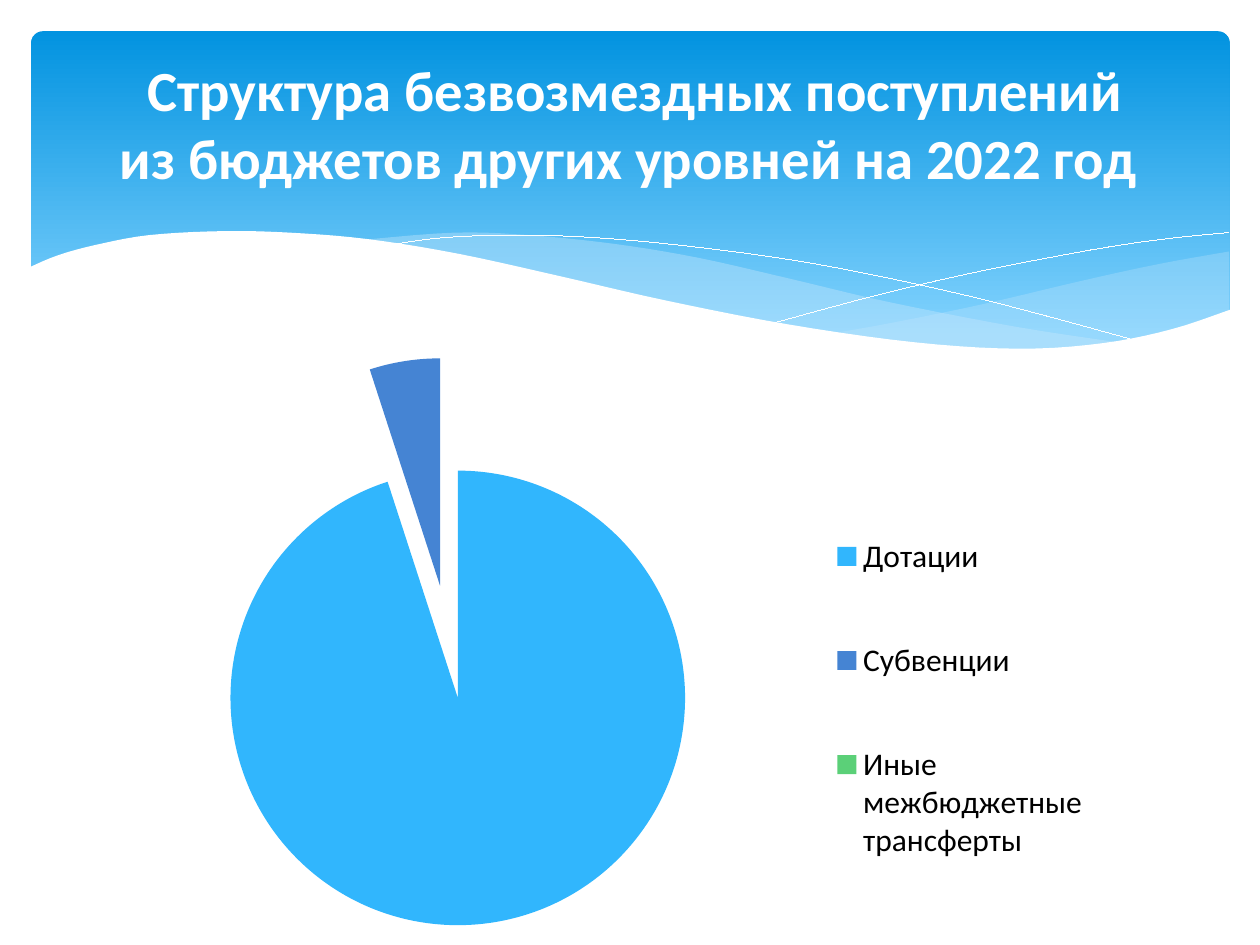
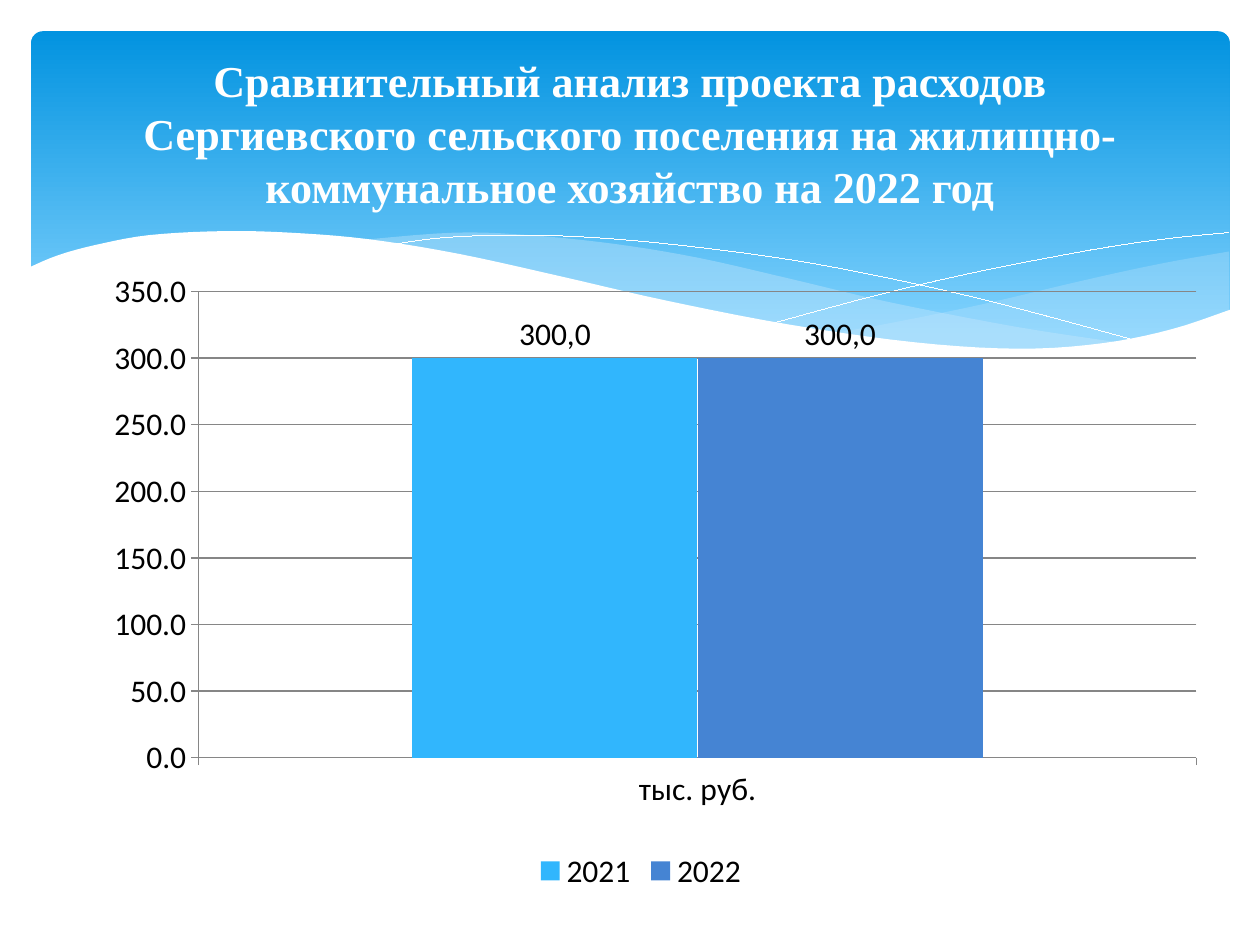
from lxml.etree import SubElement as Sub
from pptx import Presentation
from pptx.chart.data import CategoryChartData as Data
from pptx.dml.color import RGBColor
from pptx.enum.chart import XL_CHART_TYPE as Kind
from pptx.enum.chart import XL_LABEL_POSITION as Spot
from pptx.enum.chart import XL_LEGEND_POSITION as Side
from pptx.enum.chart import XL_TICK_MARK as Tick
from pptx.enum.shapes import MSO_SHAPE as Form
from pptx.enum.text import MSO_ANCHOR as Anchor
from pptx.enum.text import MSO_AUTO_SIZE as Fit
from pptx.enum.text import PP_ALIGN as Align
from pptx.oxml.ns import qn
from pptx.util import Cm, Pt

WHITE, BLACK, GREY = "FFFFFF", "000000", "868686"
DEEP, LIGHT, MIST = "0293E0", "83D3FE", "C6E7FC"
HUES = "31B6FD", "4584D3", "5BD078"
FONT = "Calibri"
BAND = 0.63, 0.63, 24.16, 6.86

RIGHT = [
    [(24.15, 4.44), (22.75, 4.69), (21.23, 5.02), (19.15, 5.51),
     (17.29, 5.89), (16.15, 6.09)],
    [(16.15, 6.09), (17.62, 6.27), (19.48, 6.4), (20.8, 6.4),
     (21.94, 6.27), (23.11, 6.01), (24.15, 5.63)],
]
LEFT = [
    [(22.04, 6.29), (19.86, 5.96), (17.29, 5.46), (15.34, 5), (13.46, 4.57),
     (11.78, 4.29), (10.03, 4.11), (8.53, 4.06), (6.62, 4.21)],
    [(6.62, 4.21), (8.55, 4.52), (10.76, 5), (12.82, 5.46), (15.06, 5.91),
     (17.01, 6.22), (18.69, 6.4), (20.14, 6.42), (22.04, 6.29)],
]
FALL = [[(7.21, 4.31), (8.33, 4.16), (9.93, 4.11), (11.78, 4.19),
         (14.14, 4.44), (16.25, 4.77), (18.66, 5.28), (20.47, 5.74),
         (22.4, 6.27)]]
RISE = [[(14.93, 5.89), (17.01, 5.33), (19.07, 4.85), (21.36, 4.41),
         (22.83, 4.19), (24.13, 4.06)]]
EDGE = [
    [(24.18, 5.61), (22.98, 6.01), (21.59, 6.29), (19.91, 6.4), (17.8, 6.27),
     (15.26, 5.91), (12.8, 5.43), (10.71, 4.95), (8.63, 4.49), (6.78, 4.19),
     (5.2, 4.06), (3.86, 4.03), (2.38, 4.11), (1.29, 4.31), (0.53, 4.52),
     (-0.06, 4.77)],
    [(-0.06, 7.72), (24.18, 7.72)],
]


def tint(code):
    """Turn a hex string into a colour."""
    return RGBColor.from_string(code)


def paint(fill, code):
    """Give a fill one solid colour."""
    fill.solid()
    fill.fore_color.rgb = tint(code)


def style(font, size, code, name=FONT, bold=False):
    """Set the look of a font."""
    font.size, font.name, font.bold = Pt(size), name, bold
    font.color.rgb = tint(code)


def smooth(knots, steps=5):
    """Return points on a Catmull-Rom curve through the knots."""
    if len(knots) < 3:
        return knots
    ends = [knots[0], *knots, knots[-1]]
    dots = [knots[0]]
    for quad in zip(ends, ends[1:], ends[2:], ends[3:]):
        for step in range(1, steps + 1):
            t = step / steps
            dots.append(tuple(
                b + t * (c - a) / 2
                + t * t * (2 * a - 5 * b + 4 * c - d) / 2
                + t ** 3 * (3 * b - a - 3 * c + d) / 2
                for a, b, c, d in zip(*quad)))
    return dots


def add_wave(slide, box, curves, code=None, alpha=100):
    """Draw curves as a filled outline, or as a thin white line."""
    left, top = box[:2]
    dots = [(Cm(left + x), Cm(top + y))
            for knots in curves for x, y in smooth(knots)]
    pen = slide.shapes.build_freeform(*dots[0], scale=1.0)
    pen.add_line_segments(dots[1:], close=code is not None)
    wave = pen.convert_to_shape()
    wave.shadow.inherit = False
    if code is None:
        wave.fill.background()
        paint(wave.line.fill, WHITE)
        wave.element.spPr.find(qn("a:ln")).set("w", "0")
        return
    paint(wave.fill, code)
    wave.line.fill.background()
    if alpha < 100:
        mark = wave.element.spPr.find(".//" + qn("a:srgbClr"))
        Sub(mark, qn("a:alpha"), val=str(alpha * 1000))


def add_band(slide, box):
    """Draw the blue header band with its waves."""
    band = slide.shapes.add_shape(Form.ROUNDED_RECTANGLE, *map(Cm, box))
    band.adjustments[0] = 0.034
    band.shadow.inherit = False
    band.line.fill.background()
    band.fill.gradient()
    band.fill.gradient_angle = 270
    for stop, code, place in zip(band.fill.gradient_stops,
                                 (DEEP, LIGHT), (0, 0.9)):
        stop.color.rgb, stop.position = tint(code), place
    add_wave(slide, box, RIGHT, MIST, 29)
    add_wave(slide, box, LEFT, MIST, 40)
    add_wave(slide, box, FALL)
    add_wave(slide, box, RISE)
    add_wave(slide, box, EDGE, WHITE)


def set_title(slide, box, text, size, name):
    """Place the title over the band and format it."""
    title = slide.shapes.title
    slide.shapes.element.append(title.element)
    title.left, title.top, title.width, title.height = map(Cm, box)
    frame = title.text_frame
    frame.text = text
    frame.auto_size, frame.word_wrap = Fit.NONE, True
    frame.vertical_anchor = Anchor.MIDDLE
    for para in frame.paragraphs:
        para.alignment = Align.CENTER
        for run in para.runs:
            style(run.font, size, WHITE, name, True)


def new_slide(deck, box, text, size, name):
    """Add a slide with the shared band and a title."""
    slide = deck.slides.add_slide(deck.slide_layouts[5])
    add_band(slide, BAND)
    set_title(slide, box, text, size, name)
    return slide


def lay_out(part, index, place, inner=False):
    """Fix a chart part at fractions of the chart's size."""
    for old in part.findall(qn("c:layout")):
        part.remove(old)
    node = part.makeelement(qn("c:layout"))
    part.insert(index, node)
    manual = Sub(node, qn("c:manualLayout"))
    if inner:
        Sub(manual, qn("c:layoutTarget"), val="inner")
    for axis in "xy":
        Sub(manual, qn(f"c:{axis}Mode"), val="edge")
    for key, share in zip("xywh", place):
        Sub(manual, qn(f"c:{key}"), val=str(share))


def add_graph(slide, box, kind, data, plot, side):
    """Add a chart with the shared font, plot place and legend."""
    chart = slide.shapes.add_chart(kind, *map(Cm, box), data).chart
    chart.has_title = False
    style(chart.font, 18, BLACK)
    chart.has_legend = True
    chart.legend.position = side
    chart.legend.include_in_layout = False
    area = chart.element.find(".//" + qn("c:plotArea"))
    lay_out(area, 0, plot, True)
    return chart


def add_pie(slide, box):
    """Add the pie of transfers with its slices pulled apart."""
    data = Data()
    data.categories = ["Дотации", "Субвенции",
                       "Иные \nмежбюджетные трансферты"]
    data.add_series("Series 1", (95, 5, None))
    chart = add_graph(slide, box, Kind.PIE, data,
                      (0.02, 0.07, 0.61, 0.9), Side.RIGHT)
    lay_out(chart.legend._element, 1, (0.69, 0.25, 0.29, 0.72))
    chart.plots[0].vary_by_categories = True
    pie = chart.plots[0].series[0]
    burst = pie._element.makeelement(qn("c:explosion"), val="25")
    pie._element.find(qn("c:cat")).addprevious(burst)
    for spot, code in enumerate(HUES):
        paint(pie.points[spot].format.fill, code)


def add_bars(slide, box):
    """Add the columns that compare two years."""
    data = Data(number_format="#,##0.0")
    data.categories = ["тыс. руб."]
    for year in ("2021", "2022"):
        data.add_series(year, [300])
    chart = add_graph(slide, box, Kind.COLUMN_CLUSTERED, data,
                      (0.11, 0.04, 0.88, 0.74), Side.BOTTOM)
    plot = chart.plots[0]
    plot.gap_width, plot.overlap = 150, 0
    plot.vary_by_categories = False
    for bar, code in zip(plot.series, HUES):
        paint(bar.format.fill, code)
        label = bar.points[0].data_label
        label.text_frame.text = "300,0"
        style(label.text_frame.paragraphs[0].runs[0].font, 18, BLACK)
        label.position = Spot.OUTSIDE_END
    scale = chart.value_axis
    scale.minimum_scale, scale.maximum_scale, scale.major_unit = 0, 350, 50
    scale.tick_labels.number_format = "#,##0.0"
    scale.tick_labels.number_format_is_linked = False
    scale.has_major_gridlines = True
    paint(scale.major_gridlines.format.line.fill, GREY)
    for axis in (scale, chart.category_axis):
        axis.major_tick_mark = Tick.OUTSIDE
        axis.minor_tick_mark = Tick.NONE
        paint(axis.format.line.fill, GREY)


def main():
    """Build both slides and save the deck."""
    deck = Presentation()
    deck.slide_width, deck.slide_height = Cm(25.4), Cm(19.05)
    slide = new_slide(
        deck, (1.5, 0.74, 22.61, 3.48),
        "Структура безвозмездных поступлений\v"
        "из бюджетов других уровней на 2022 год ", 32.4, FONT)
    add_pie(slide, (2.49, 6.32, 20.19, 12.73))
    slide = new_slide(
        deck, (1.27, 0.94, 22.86, 3.48),
        "Сравнительный анализ проекта расходов Сергиевского сельского "
        "поселения на жилищно-коммунальное хозяйство на 2022 год",
        25.2, "Times New Roman")
    add_bars(slide, (1.49, 5.37, 22.86, 12.7))
    deck.save("out.pptx")


if __name__ == "__main__":
    main()
